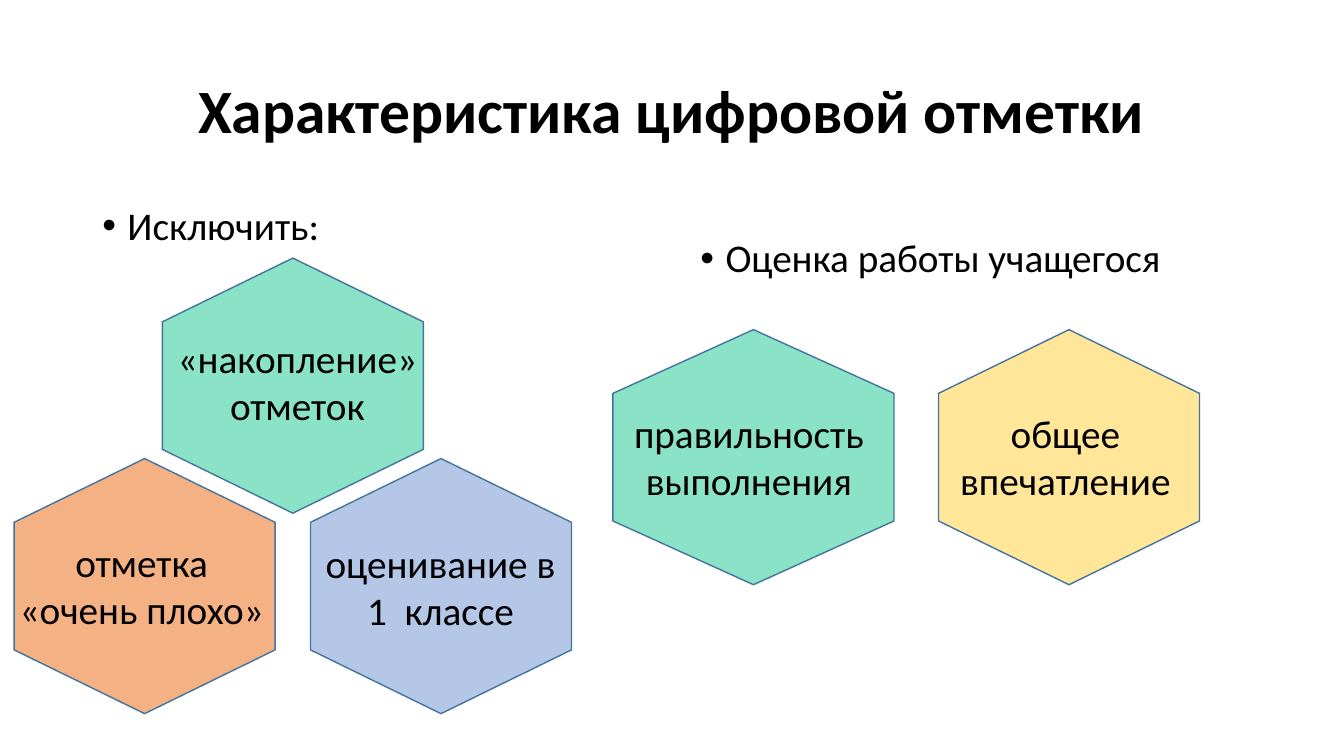
from dataclasses import dataclass

from lxml.etree import SubElement
from pptx import Presentation
from pptx.dml.color import RGBColor
from pptx.enum.shapes import MSO_SHAPE
from pptx.enum.text import MSO_ANCHOR, MSO_AUTO_SIZE, PP_ALIGN
from pptx.oxml.ns import qn
from pptx.slide import Slide
from pptx.text.text import TextFrame, _Paragraph
from pptx.util import Pt

BLACK = RGBColor(0x00, 0x00, 0x00)
OUTLINE = RGBColor(0x43, 0x73, 0x9E)
GREEN = RGBColor(0x8A, 0xE2, 0xC7)
BLUE = RGBColor(0xB4, 0xC7, 0xE7)
ORANGE = RGBColor(0xF4, 0xB1, 0x83)
YELLOW = RGBColor(0xFF, 0xE6, 0x99)

FONT = "Calibri"
BODY_SIZE = 28
TITLE_SIZE = 44
HEXAGON_WIDTH = 182.2
LABEL_HEIGHT = 75
BULLET_INDENT = 18


@dataclass(frozen=True)
class Heading:
    text: str
    left: float
    top: float


@dataclass(frozen=True)
class Hexagon:
    text: str
    color: RGBColor
    left: float
    top: float
    label_left: float
    label_top: float
    label_width: float
    height: float = 186.5


HEADINGS = [
    Heading("Исключить:", 66, 144),
    Heading("Оценка работы учащегося", 493.2, 167),
]

HEXAGONS = [
    Hexagon("«накопление» отметок", GREEN, 118.1, 182.2, 110.2, 235.4, 204.5),
    Hexagon("оценивание в 1  классе", BLUE, 223.9, 325.4, 216.7, 381.6, 195.8),
    Hexagon("отметка «очень плохо»", ORANGE, 12.2, 325.4, 5.8, 380.9, 190.8),
    Hexagon("правильность выполнения", GREEN, 447.1, 226.1, 432.7, 288.7, 204.5, 200.9),
    Hexagon("общее впечатление", YELLOW, 672.5, 233.3, 658.8, 288.7, 204.5),
]


def write_text(frame: TextFrame, text: str, size: float, alignment: PP_ALIGN,
               bold: bool = False) -> _Paragraph:
    """Write one formatted run into the first paragraph and return the paragraph."""
    frame.word_wrap = True
    paragraph = frame.paragraphs[0]
    paragraph.alignment = alignment
    run = paragraph.add_run()
    run.text = text
    run.font.name = FONT
    run.font.size = Pt(size)
    run.font.bold = bold
    run.font.color.rgb = BLACK
    return paragraph


def format_title(slide: Slide, text: str) -> None:
    """Place and fill the title placeholder."""
    title = slide.shapes.title
    title.left, title.top = Pt(66), Pt(28.8)
    title.width, title.height = Pt(828), Pt(104.4)
    frame = title.text_frame
    frame.auto_size = MSO_AUTO_SIZE.NONE
    frame.vertical_anchor = MSO_ANCHOR.MIDDLE
    paragraph = write_text(frame, text, TITLE_SIZE, PP_ALIGN.CENTER, bold=True)
    paragraph.line_spacing = 0.9


def add_heading(slide: Slide, heading: Heading) -> None:
    """Add a bulleted heading above a group of hexagons."""
    box = slide.shapes.add_textbox(Pt(heading.left), Pt(heading.top), Pt(408.2), Pt(342.7))
    paragraph = write_text(box.text_frame, heading.text, BODY_SIZE, PP_ALIGN.LEFT)
    paragraph.line_spacing = 0.9
    paragraph.space_before = Pt(10)
    properties = paragraph._p.get_or_add_pPr()
    properties.set("marL", str(Pt(BULLET_INDENT)))
    properties.set("indent", str(-Pt(BULLET_INDENT)))
    SubElement(properties, qn("a:buFont"), typeface="Arial")
    SubElement(properties, qn("a:buChar"), char="•")


def add_hexagon(slide: Slide, hexagon: Hexagon) -> None:
    """Add an upright hexagon and the label over it."""
    shape = slide.shapes.add_shape(
        MSO_SHAPE.HEXAGON, Pt(hexagon.left), Pt(hexagon.top),
        Pt(HEXAGON_WIDTH), Pt(hexagon.height))
    shape.rotation = 270
    shape.shadow.inherit = False
    shape.fill.solid()
    shape.fill.fore_color.rgb = hexagon.color
    shape.line.color.rgb = OUTLINE
    shape.line.width = Pt(1)
    label = slide.shapes.add_textbox(
        Pt(hexagon.label_left), Pt(hexagon.label_top),
        Pt(hexagon.label_width), Pt(LABEL_HEIGHT))
    write_text(label.text_frame, hexagon.text, BODY_SIZE, PP_ALIGN.CENTER)
    label.text_frame.auto_size = MSO_AUTO_SIZE.SHAPE_TO_FIT_TEXT


def main() -> None:
    """Build the slide and save the presentation."""
    presentation = Presentation()
    presentation.slide_width, presentation.slide_height = Pt(960), Pt(540)
    slide = presentation.slides.add_slide(presentation.slide_layouts.get_by_name("Title Only"))
    format_title(slide, "Характеристика цифровой отметки")
    for heading in HEADINGS:
        add_heading(slide, heading)
    for hexagon in HEXAGONS:
        add_hexagon(slide, hexagon)
    presentation.save("out.pptx")


if __name__ == "__main__":
    main()
